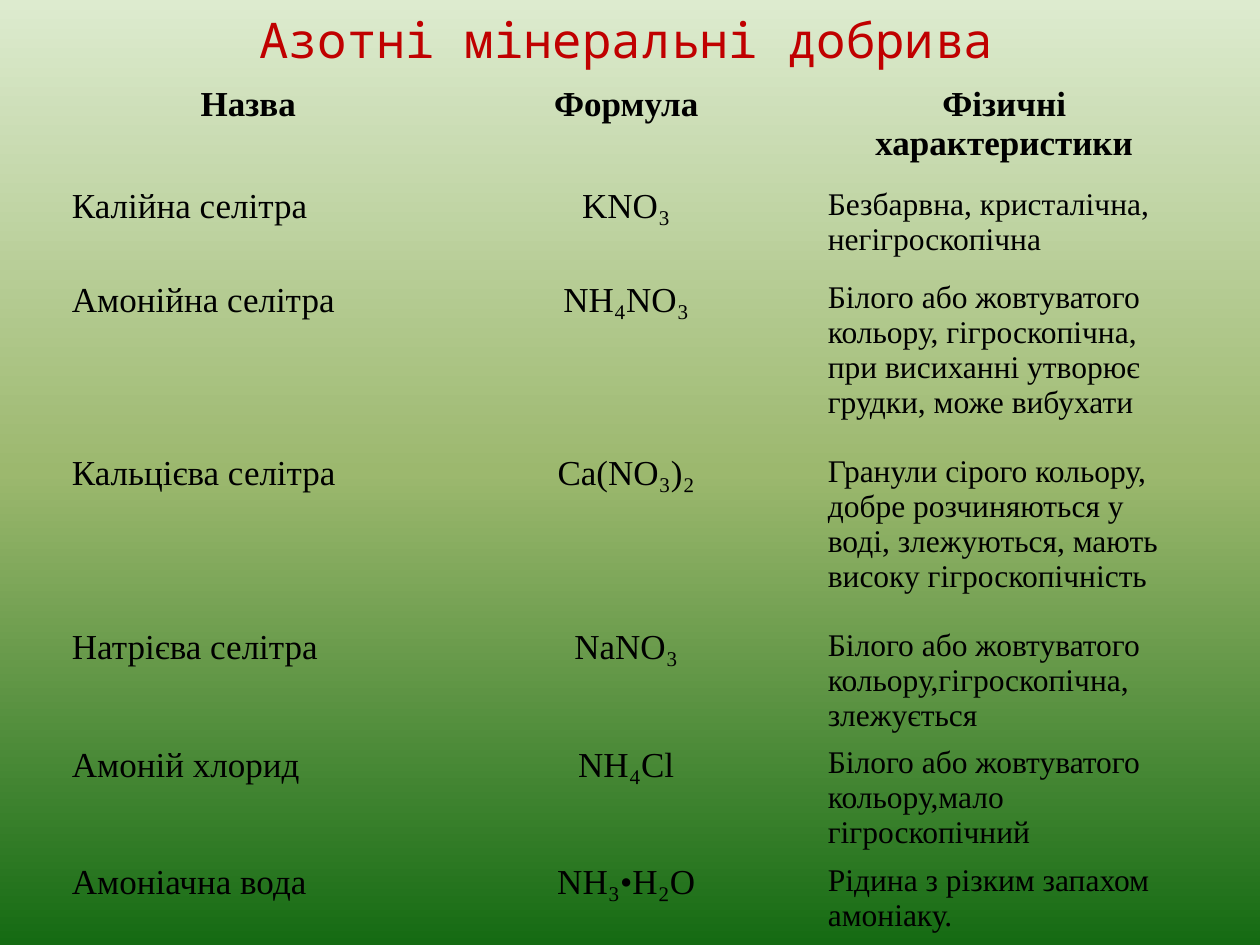
"""Builds a slide with a table of nitrogen mineral fertilizers."""
from copy import deepcopy

from pptx import Presentation
from pptx.dml.color import RGBColor
from pptx.enum.text import PP_ALIGN as Align
from pptx.oxml.ns import qn
from pptx.util import Inches, Pt

TITLE = "Азотні мінеральні добрива"
HEADERS = ("Назва", "Формула", "Фізичні характеристики")
FERTILIZERS = [
    ("Калійна селітра", "KNO₃", "Безбарвна, кристалічна,\nнегігроскопічна"),
    ("Амонійна селітра", "NH₄NO₃",
     "Білого або жовтуватого кольору, гігроскопічна, при висиханні утворює грудки, може вибухати"),
    ("Кальцієва селітра", "Ca(NO₃)₂",
     "Гранули сірого кольору, добре розчиняються у воді, злежуються, мають високу гігроскопічність"),
    ("Натрієва селітра", "NaNO₃", "Білого або жовтуватого кольору,гігроскопічна, злежується"),
    ("Амоній хлорид", "NH₄Cl", "Білого або жовтуватого кольору,мало гігроскопічний"),
    ("Амоніачна вода", "NH₃•H₂O", "Рідина з різким запахом амоніаку."),
]
ROW_HEIGHTS = (0.6, 0.81, 0.74, 1.38, 1.38, 0.93, 0.93, 0.74)
COLUMN_WIDTH = 3
COLUMN_STYLES = ((20, Align.LEFT), (20, Align.CENTER), (18, Align.LEFT))
COLORS = {"title": "C00000", "text": "000000"}
BACKGROUND_STOPS = ((0, "DDEBCF"), (0.5, "9CB86E"), (1, "156B13"))
TITLE_FONT, BODY_FONT = "Noto Sans Mono", "Times New Roman"
PLAIN_TABLE_STYLE = "{2D5ABB26-0587-4C30-8999-92F81FD0307C}"


def paint_background(slide):
    fill = slide.background.fill
    fill.gradient()
    fill.gradient_angle = 270
    stop_list = slide.element.find(".//" + qn("a:gsLst"))
    stop_list.append(deepcopy(stop_list[-1]))
    for stop, (position, color) in zip(fill.gradient_stops, BACKGROUND_STOPS):
        stop.position = position
        stop.color.rgb = RGBColor.from_string(color)


def write_cell(cell, text, size, align, font_name=BODY_FONT, color="text", bold=False):
    cell.fill.background()
    cell.text_frame.text = text
    for paragraph in cell.text_frame.paragraphs:
        paragraph.alignment = align
        for run in paragraph.runs:
            font = run.font
            font.name, font.size, font.bold = font_name, Pt(size), bold
            font.color.rgb = RGBColor.from_string(COLORS[color])


def add_fertilizer_table(slide):
    columns = len(HEADERS)
    frame = slide.shapes.add_table(
        len(ROW_HEIGHTS), columns, Inches(0.47), 0,
        Inches(COLUMN_WIDTH * columns), Inches(sum(ROW_HEIGHTS)))
    table = frame.table
    table.first_row = table.horz_banding = False
    table._tbl.tblPr.find(qn("a:tableStyleId")).text = PLAIN_TABLE_STYLE
    for row, height in zip(table.rows, ROW_HEIGHTS):
        row.height = Inches(height)

    table.cell(0, 0).merge(table.cell(0, columns - 1))
    write_cell(table.cell(0, 0), TITLE, 28, Align.CENTER, TITLE_FONT, "title")
    for column, header in enumerate(HEADERS):
        write_cell(table.cell(1, column), header, 20, Align.CENTER, bold=True)
    for row, fertilizer in enumerate(FERTILIZERS, start=2):
        for column, (text, style) in enumerate(zip(fertilizer, COLUMN_STYLES)):
            write_cell(table.cell(row, column), text, *style)


def main():
    presentation = Presentation()
    presentation.slide_width, presentation.slide_height = Inches(10), Inches(7.5)
    slide = presentation.slides.add_slide(presentation.slide_layouts[6])
    paint_background(slide)
    add_fertilizer_table(slide)
    presentation.save("out.pptx")


if __name__ == "__main__":
    main()
